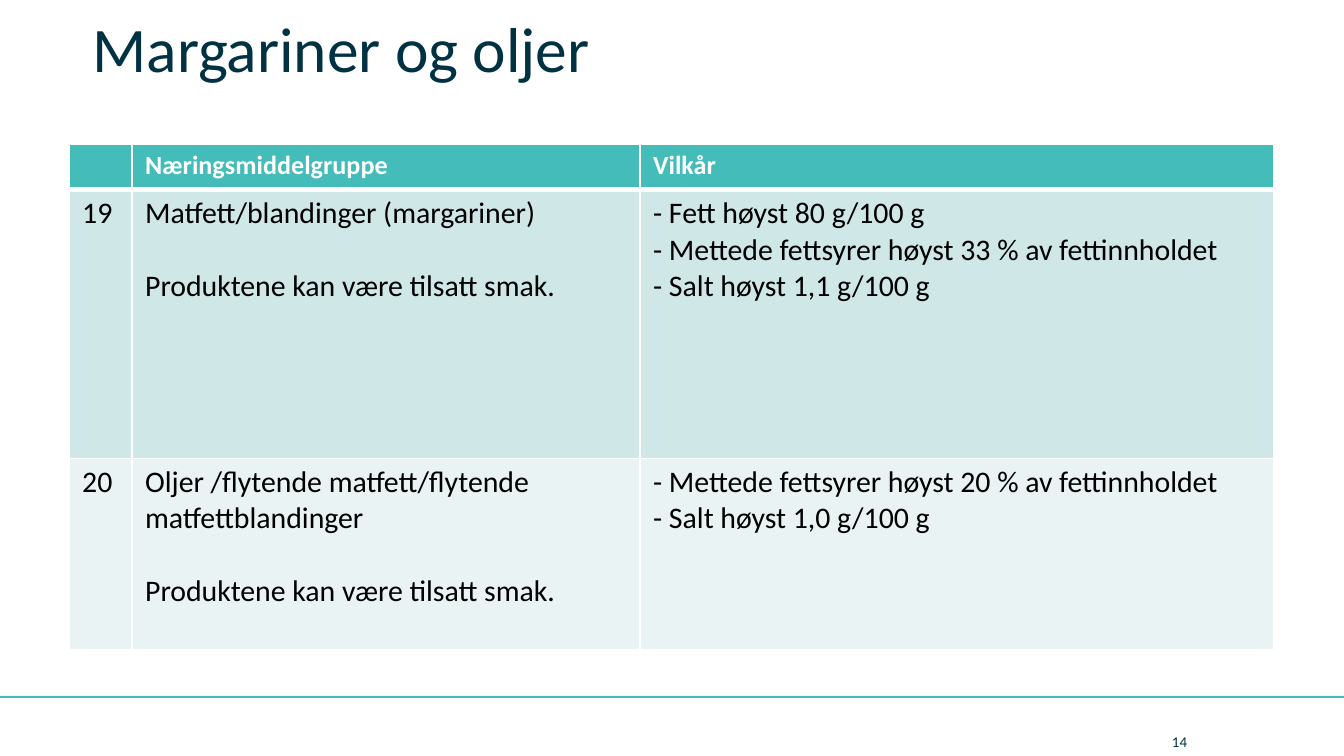
"""Build the slide on terms for margarines and oils."""
from dataclasses import dataclass

from lxml.etree import SubElement as Sub
from pptx import Presentation as Deck
from pptx.dml.color import RGBColor as Rgb
from pptx.enum.shapes import MSO_CONNECTOR as Link
from pptx.enum.text import MSO_ANCHOR as Anchor
from pptx.oxml.ns import qn
from pptx.util import Cm, Pt

TEAL = Rgb(0x43, 0xBC, 0xBA)
NAVY = Rgb(0x00, 0x32, 0x44)
MIST = Rgb(0xCF, 0xE7, 0xE7)
PALE = Rgb(0xE9, 0xF3, 0xF3)
WHITE = Rgb(0xFF, 0xFF, 0xFF)
BLACK = Rgb(0x00, 0x00, 0x00)


@dataclass
class Style:
    size: float
    color: Rgb
    bold: bool = False
    gap: float = 0


@dataclass
class Label:
    text: str
    box: tuple[float, float, float, float]
    style: Style
    frame: dict


@dataclass
class Row:
    cells: list[list[str]]
    height: float
    fill: Rgb
    style: Style
    top: float = 1
    base: float = 1


HEAD = Style(14, WHITE, True)
BODY = Style(16, BLACK)
SMOKE = "Produktene kan være tilsatt smak."
COLS = (1.19, 9.6, 11.99)
ROWS = [
    Row([[""], ["Næringsmiddelgruppe"], ["Vilkår"]], 0.86, TEAL, HEAD, base=3),
    Row([["19"], ["Matfett/blandinger (margariner)", SMOKE],
         ["- Fett høyst 80 g/100 g",
          "- Mettede fettsyrer høyst 33 % av fettinnholdet",
          "- Salt høyst 1,1 g/100 g"]], 5.08, MIST, BODY, top=3),
    Row([["20"], ["Oljer /flytende matfett/flytende matfettblandinger", SMOKE],
         ["- Mettede fettsyrer høyst 20 % av fettinnholdet",
          "- Salt høyst 1,0 g/100 g"]], 3.62, PALE, BODY),
]
LABELS = [
    Label("Margariner og oljer", (1.5, 0, 22.6, 1.73), Style(34, NAVY),
          {"vertical_anchor": Anchor.BOTTOM, "word_wrap": True}),
    Label("14", (21.9, 13.87, 1.8, 0.3), Style(8, NAVY),
          {"vertical_anchor": Anchor.MIDDLE, "word_wrap": True,
           "margin_top": 0, "margin_bottom": 0}),
]


def write(frame, lines: list[str], style: Style) -> None:
    """Fill a text frame with one paragraph per line."""
    look = {"name": "Calibri", "size": Pt(style.size), "bold": style.bold}
    for i, line in enumerate(lines):
        para = frame.add_paragraph() if i else frame.paragraphs[0]
        if i and style.gap:
            para.space_before = Pt(style.gap)
        if not line:
            Sub(para._p, qn("a:endParaRPr"), sz=str(int(style.size * 100)))
            continue
        run = para.add_run()
        run.text = line
        for key, val in look.items():
            setattr(run.font, key, val)
        run.font.color.rgb = style.color


def edge(cell, row: Row) -> None:
    """Draw the white borders of a cell."""
    props = cell._tc.get_or_add_tcPr()
    sides = {"lnL": 1, "lnR": 1, "lnT": row.top, "lnB": row.base}
    for side, width in sides.items():
        line = Sub(props, qn(f"a:{side}"), w=str(Pt(width)))
        Sub(Sub(line, qn("a:solidFill")), qn("a:srgbClr"), val=str(WHITE))


def grid(slide) -> None:
    """Draw the table of food groups and terms."""
    high = sum(row.height for row in ROWS)
    table = slide.shapes.add_table(len(ROWS), len(COLS), Cm(1.3), Cm(2.73),
                                   Cm(sum(COLS)), Cm(high)).table
    table.horz_banding = False
    for col, width in zip(table.columns, COLS):
        col.width = Cm(width)
    pad = {"margin_top": Cm(0.1), "margin_bottom": Cm(0.1)}
    for line, row in zip(table.rows, ROWS):
        line.height = Cm(row.height)
        for i, (cell, text) in enumerate(zip(line.cells, row.cells)):
            for key, val in pad.items():
                setattr(cell, key, val)
            edge(cell, row)
            cell.fill.solid()
            cell.fill.fore_color.rgb = row.fill
            gap = 19.5 if i == 1 else 0
            style = Style(row.style.size, row.style.color, row.style.bold, gap)
            write(cell.text_frame, text, style)


def label(slide, item: Label) -> None:
    """Place a text box."""
    frame = slide.shapes.add_textbox(*map(Cm, item.box)).text_frame
    for key, val in item.frame.items():
        setattr(frame, key, val)
    write(frame, [item.text], item.style)


def rule(slide, wide: int) -> None:
    """Draw the line above the footer."""
    line = slide.shapes.add_connector(Link.STRAIGHT, 0, Cm(13.18), wide, Cm(13.18))
    line.line.color.rgb = TEAL
    line.line.width = Pt(1)
    Sub(line._element.spPr, qn("a:effectLst"))


def main() -> None:
    """Build and save the deck."""
    deck = Deck()
    deck.slide_width, deck.slide_height = Cm(25.4), Cm(14.29)
    slide = deck.slides.add_slide(deck.slide_layouts[6])
    rule(slide, deck.slide_width)
    grid(slide)
    for item in LABELS:
        label(slide, item)
    deck.save("out.pptx")


if __name__ == "__main__":
    main()
